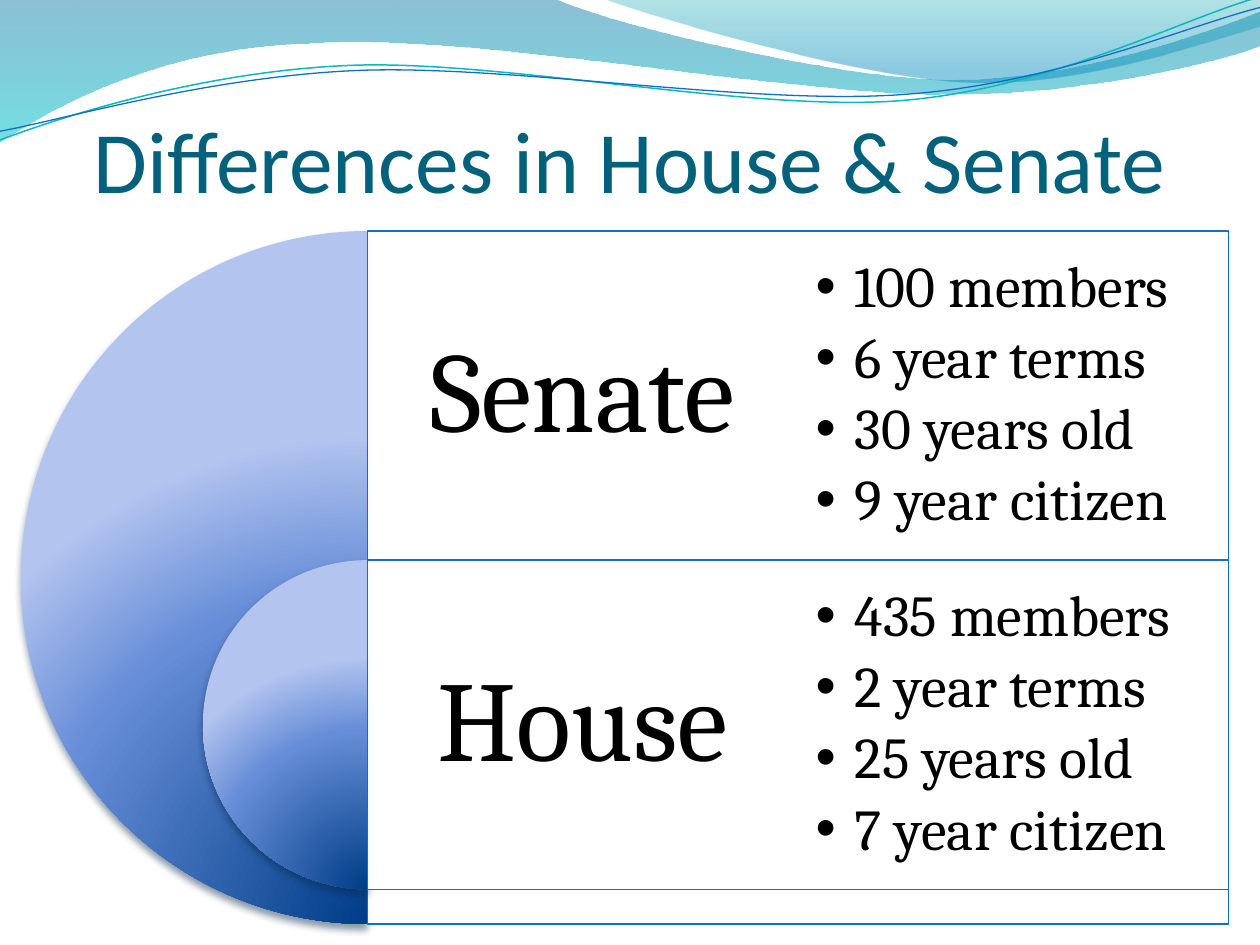
import math

import pptx
import pptx.util
import pptx.dml.color
import pptx.enum.shapes
import pptx.enum.text
import pptx.oxml
import pptx.oxml.ns

Pt = pptx.util.Pt
qn = pptx.oxml.ns.qn
PP_ALIGN = pptx.enum.text.PP_ALIGN
ANCHOR = pptx.enum.text.MSO_ANCHOR
SHAPE = pptx.enum.shapes.MSO_SHAPE
NS = pptx.oxml.ns.nsdecls("a")
LINE_TILT = -2.7  # degrees

# Waves in points: a 2-number step is a line, a 6-number step a Bezier curve
BAND = [(0, 0), (317, -0.7), (342.7, 12.2, 478, 45.4, 545.8, 45.4),
        (614, 45.4, 690, 18.7, 720, 6.5), (720.7, 26),
        (708, 31.7, 626.4, 54.7, 537, 54), (448, 54, 275, 20.2, 185, 24.5),
        (93, 26, 33, 60, -0.7, 81.4)]
CREST = [(345, -0.7), (366.5, 8, 491, 44.6, 553.7, 46.8),
         (616.3, 49.7, 692, 23, 720, 15), (720, 0)]
TEAL_LINE = [(0, 80), (34.6, 67, 113.8, 41, 199.4, 37.4),
             (284.4, 33.8, 427, 64, 513.4, 57.6), (599.8, 51, 675.4, 10.8, 718.6, -1.4)]
BLUE_LINE = [(0, 75), (33.8, 69, 118, 44, 203.8, 40.3),
             (290, 36.7, 429.8, 60.5, 516.2, 54), (602, 48.2, 677.5, 15, 720, 4.3)]

BALL_STOPS = [(0, "003D87", 100), (68, "668DD7", 100), (100, "B3C4EF", 100)]
BALL_DIRECTION = ('<a:path path="circle"><a:fillToRect l="50000" t="130000" '
                  'r="50000" b="-30000"/></a:path>')
DOWNWARD = '<a:lin ang="5400000" scaled="1"/>'

CHAMBERS = [
    ("Senate", ["100 members", "6 year terms", "30 years old", "9 year citizen"]),
    ("House", ["435 members", "2 year terms", "25 years old", "7 year citizen"]),
]


def rgb(hex_code):
    return pptx.dml.color.RGBColor.from_string(hex_code)


def add_xml(parent, xml):
    parent.append(pptx.oxml.parse_xml(xml))


def set_attrs(obj, **values):
    for name, value in values.items():
        setattr(obj, name, value)


def place(sp, box):
    set_attrs(sp, **dict(zip(("left", "top", "width", "height"), map(Pt, box))))


def set_gradient(sp, stops, direction):
    """stops: (position %, colour, opacity %)."""
    marks = "".join(
        f'<a:gs pos="{pos * 1000}"><a:srgbClr val="{color}">'
        f'<a:alpha val="{alpha * 1000}"/></a:srgbClr></a:gs>'
        for pos, color, alpha in stops)
    sp.fill.background()
    old = sp._element.spPr.find(qn("a:noFill"))
    old.getparent().replace(old, pptx.oxml.parse_xml(
        f'<a:gradFill {NS} rotWithShape="1"><a:gsLst>{marks}</a:gsLst>'
        f'{direction}</a:gradFill>'))


def set_line(sp, color, width):
    sp.line.color.rgb = rgb(color)
    sp.line.width = Pt(width)


def turn(point, center, degrees):
    x, y = point[0] - center[0], point[1] - center[1]
    c, n = math.cos(math.radians(degrees)), math.sin(math.radians(degrees))
    return center[0] + x * c - y * n, center[1] + x * n + y * c


def add_wave(s, left, top, steps, closed, center=(0, 0), tilt=0):
    """Lay the points out level, bend the curves, then tilt the shape."""
    points = [turn(step[i:i + 2], center, -tilt)
              for step in steps for i in range(0, len(step), 2)]
    points = [(Pt(left + x), Pt(top + y)) for x, y in points]
    builder = s.shapes.build_freeform(*points[0], scale=1.0)
    builder.add_line_segments(points[1:], close=closed)
    sp = builder.convert_to_shape()
    segments = iter(sp._element.spPr.findall(".//" + qn("a:lnTo")))
    for step in steps[1:]:
        first = next(segments)
        if len(step) == 6:
            first.tag = qn("a:cubicBezTo")
            for other in (next(segments), next(segments)):
                first.append(other[0])
                other.getparent().remove(other)
    sp.rotation = tilt % 360
    sp.shadow.inherit = False
    return sp


def add_header(s, left, top):
    fills = [(BAND, [(0, "0074A1", 45), (100, "00C6CF", 55)]),
             (CREST, [(0, "00A1A9", 30), (80, "008BBF", 45)])]
    for steps, stops in fills:
        sp = add_wave(s, left, top, steps, True)
        set_gradient(sp, stops, DOWNWARD)
        sp.line.fill.background()
    for steps, center, color, width in [
            (TEAL_LINE, (359.3, 41.4), "0AB8BF", 0.85),
            (BLUE_LINE, (359.6, 42.5), "0F6FC6", 0.75)]:
        sp = add_wave(s, left, top, steps, False, center, LINE_TILT)
        sp.fill.background()
        set_line(sp, color, width)


def format_frame(sp, anchor, *insets):
    tf = sp.text_frame
    set_attrs(tf, word_wrap=True, vertical_anchor=anchor,
              auto_size=pptx.enum.text.MSO_AUTO_SIZE.NONE)
    names = ("margin_left", "margin_top", "margin_right", "margin_bottom")
    set_attrs(tf, **dict(zip(names, map(Pt, insets))))
    return tf


def write(p, text, align, font, size, color):
    p.alignment = align
    r = p.add_run()
    r.text = text
    set_attrs(r.font, name=font, size=Pt(size), bold=False)
    r.font.color.rgb = rgb(color)


def set_spacing(p, after):
    p.space_before = Pt(0)
    p.line_spacing = 0.9
    add_xml(p._p.get_or_add_pPr(),
            f'<a:spcAft {NS}><a:spcPct val="{after * 1000}"/></a:spcAft>')


def add_title(s, box, text):
    sp = s.shapes.title
    place(sp, box)
    s.shapes._spTree.append(sp._element)
    tf = format_frame(sp, ANCHOR.BOTTOM, 0, 3.6, 0, 0)
    write(tf.paragraphs[0], text, PP_ALIGN.CENTER, "Calibri", 50, "04617B")


def add_half_disc(s, center_x, top, size):
    sp = s.shapes.add_shape(SHAPE.PIE, *map(Pt, (center_x - size / 2, top, size, size)))
    sp.adjustments[0], sp.adjustments[1] = 54, 162  # 90 to 270 degrees
    set_gradient(sp, BALL_STOPS, BALL_DIRECTION)
    sp.line.fill.background()
    sp.shadow.inherit = False
    add_xml(sp._element.spPr.find(qn("a:effectLst")),
            f'<a:outerShdw {NS} blurRad="{Pt(4.5)}" dist="{Pt(3)}" dir="5400000" '
            'rotWithShape="0"><a:srgbClr val="042747"><a:alpha val="48000"/>'
            '</a:srgbClr></a:outerShdw>')


def add_panel(s, box):
    sp = s.shapes.add_shape(SHAPE.RECTANGLE, *map(Pt, box))
    sp.shadow.inherit = False
    sp.fill.solid()
    sp.fill.fore_color.rgb = rgb("FFFFFF")
    color = sp._element.spPr.find(".//" + qn("a:srgbClr"))
    add_xml(color, f'<a:alpha {NS} val="90000"/>')
    set_line(sp, "0F6FC6", 0.75)


def add_name(s, box, name):
    sp = s.shapes.add_textbox(*map(Pt, box))
    p = format_frame(sp, ANCHOR.MIDDLE, *[19.5] * 4).paragraphs[0]
    set_spacing(p, 35)
    write(p, name, PP_ALIGN.CENTER, "Cambria", 65, "000000")


def add_facts(s, body, box, facts):
    place(body, box)
    s.shapes._spTree.append(body._element)
    tf = format_frame(body, ANCHOR.MIDDLE, *[10] * 4)
    for i, fact in enumerate(facts):
        p = tf.add_paragraph() if i else tf.paragraphs[0]
        set_spacing(p, 15)
        pPr = p._p.get_or_add_pPr()
        pPr.set("marL", str(Pt(22.5)))
        pPr.set("indent", str(-Pt(22.5)))
        add_xml(pPr, f'<a:buChar {NS} char="•"/>')
        write(p, fact, PP_ALIGN.LEFT, "Cambria", 33, "000000")


def add_comparison(s, box, row_height):
    left, top, width, height = box
    half = width / 2
    bodies = list(s.placeholders)[1:]
    for i, (name, _) in enumerate(CHAMBERS):
        y = top + i * row_height
        # The outer layer fills the box, the inner one only its row
        layer = row_height if i else height
        add_half_disc(s, left, y, layer)
        add_panel(s, (left, y, width, layer))
        add_name(s, (left, y, half, row_height), name)
    for i, (body, (_, facts)) in enumerate(zip(bodies, CHAMBERS)):
        add_facts(s, body, (left + half, top + i * row_height, half, row_height), facts)


def main():
    prs = pptx.Presentation()
    prs.slide_width, prs.slide_height = Pt(720), Pt(540)
    s = prs.slides.add_slide(prs.slide_layouts[3])
    add_header(s, 0, 0)
    add_title(s, (36, 55.5, 648, 65), "Differences in House & Senate")
    add_comparison(s, (210, 132, 492, 396), 188.1)
    prs.save("out.pptx")


if __name__ == "__main__":
    main()
